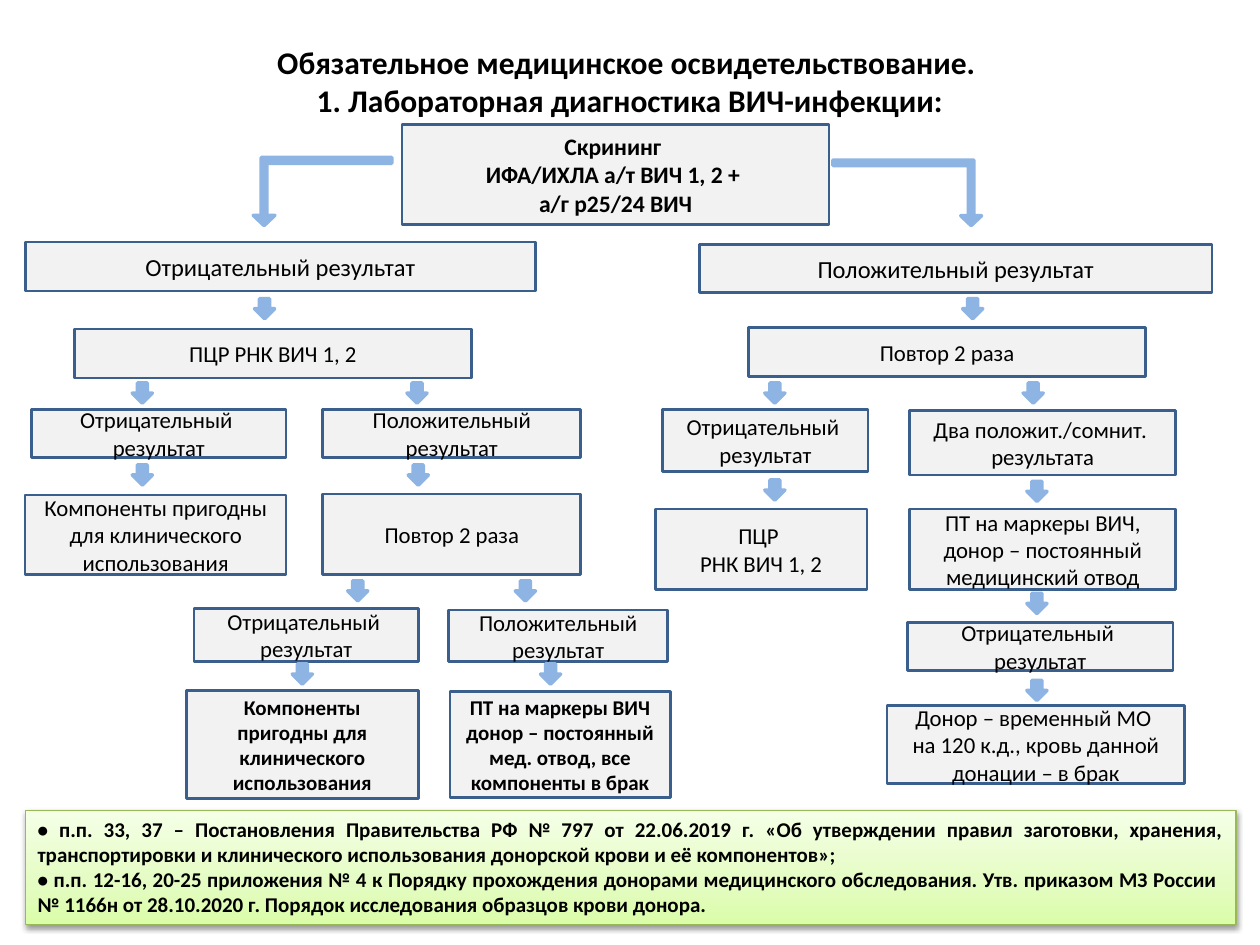
from lxml import etree
from pptx import Presentation, util as u
from pptx.dml.color import RGBColor
from pptx.enum import shapes, text
from pptx.oxml import parse_xml

PX = 9144  # 100 px to the inch
NS = 'xmlns:a="http://schemas.openxmlformats.org/drawingml/2006/main"'
BOX_FILL, BOX_LINE, ARROW, INK = "F2F2F2", "3A5F8C", "8EB4E3", "000000"
hexrgb = RGBColor.from_string


def add_shape(kind, box, fill, line, width):
    sp = s.shapes.add_shape(kind, *(v * PX for v in box))
    sp.shadow.inherit = False
    sp.fill.solid()
    sp.fill.fore_color.rgb = hexrgb(fill)
    sp.line.color.rgb = hexrgb(line)
    sp.line.width = u.Pt(width)
    return sp


def write(tf, lines, size, bold=False, align=text.PP_ALIGN.CENTER,
          anchor=text.MSO_ANCHOR.MIDDLE):
    tf.word_wrap = True
    tf.vertical_anchor = anchor
    font = {"name": "Calibri", "size": u.Pt(size), "bold": bold}
    for i, line in enumerate(lines):
        p = tf.paragraphs[0] if i == 0 else tf.add_paragraph()
        p.text = line
        p.alignment = align
        for r in p.runs:
            r.font.color.rgb = hexrgb(INK)
            for name, value in font.items():
                setattr(r.font, name, value)


prs = Presentation()
prs.slide_width, prs.slide_height = 1000 * PX, 750 * PX
s = prs.slides.add_slide(prs.slide_layouts[5])

title = s.shapes.title
for name, value in zip(("left", "top", "width", "height"), (51, 29, 898, 71)):
    setattr(title, name, value * PX)
write(title.text_frame, ["Обязательное медицинское освидетельствование. ",
                         "1. Лабораторная диагностика ВИЧ-инфекции:"],
      18, True, anchor=text.MSO_ANCHOR.TOP)
title.text_frame.auto_size = text.MSO_AUTO_SIZE.SHAPE_TO_FIT_TEXT

# Flowchart boxes: position, lines, text size, bold
negative = ["Отрицательный ", "результат"]
positive = ["Положительный", "результат"]
usable = ["Компоненты пригодны для клинического использования"]
repeat = ["Повтор 2 раза"]
boxes = [
    ((319, 99, 339, 79), ["Скрининг ", "ИФА/ИХЛА а/т ВИЧ 1, 2 + ", "а/г р25/24 ВИЧ"], 13.5, True),
    # negative branch
    ((20, 192, 405, 39), ["Отрицательный результат"], 14, False),
    ((59, 261, 315, 39), ["ПЦР РНК ВИЧ 1, 2"], 13, False),
    ((25, 325, 202, 38), negative, 13, False),
    ((256, 325, 205, 38), positive, 13, False),
    ((20, 393, 207, 63), usable, 13, False),
    ((256, 392, 205, 64), repeat, 13, False),
    ((154, 483, 178, 42), negative, 13, False),
    ((356, 484, 174, 41), positive, 13, False),
    ((148, 548, 184, 86), usable, 12, True),
    ((357, 549, 175, 84),
     ["ПТ на маркеры ВИЧ донор – постоянный мед. отвод, все компоненты в брак"], 12, True),
    # positive branch
    ((555, 194, 407, 38), ["Положительный результат"], 14, False),
    ((594, 260, 315, 39), repeat, 13, False),
    ((526, 325, 163, 49), negative, 13, False),
    ((722, 326, 211, 51), ["Два положит./сомнит. ", "результата"], 13, False),
    ((520, 404, 168, 64), ["ПЦР ", "РНК ВИЧ 1, 2"], 13, False),
    ((722, 404, 211, 64), ["ПТ на маркеры ВИЧ, донор – постоянный медицинский отвод"], 13, False),
    ((720, 494, 211, 38), negative, 13, False),
    ((704, 560, 236, 62),
     ["Донор – временный МО ", "на 120 к.д., кровь данной донации – в брак"], 13, False),
]
for box, lines, size, bold in boxes:
    sp = add_shape(shapes.MSO_SHAPE.RECTANGLE, box, BOX_FILL, BOX_LINE, 1.5)
    write(sp.text_frame, lines, size, bold)

# Legal references on a green gradient with a soft shadow
note = add_shape(shapes.MSO_SHAPE.RECTANGLE, (20, 643, 961, 91), "E4FCC2", "98B955", 0.75)
write(note.text_frame, [
    "• п.п. 33, 37 – Постановления Правительства РФ № 797 от 22.06.2019 г. "
    "«Об утверждении правил заготовки, хранения, транспортировки и клинического "
    "использования донорской крови и её компонентов»;",
    "• п.п. 12-16, 20-25 приложения № 4 к Порядку прохождения донорами медицинского "
    "обследования. Утв. приказом МЗ России \v"
    "№ 1166н от 28.10.2020 г. Порядок исследования образцов крови донора. ",
], 12, True, text.PP_ALIGN.JUSTIFY, text.MSO_ANCHOR.TOP)
note.text_frame.auto_size = text.MSO_AUTO_SIZE.SHAPE_TO_FIT_TEXT

note.fill.gradient()
note.fill.gradient_angle = 90
stops = note._element.spPr.find(".//{*}gsLst")
for stop in list(stops):
    stops.remove(stop)
for pos, color in ((0, "DAFDA7"), (35, "E4FCC2"), (100, "F5FFE7")):
    stops.append(parse_xml(
        f'<a:gs {NS} pos="{pos * 1000}"><a:srgbClr val="{color}"/></a:gs>'))
note._element.spPr.find("{*}effectLst").append(parse_xml(
    f'<a:outerShdw {NS} blurRad="{u.Pt(3.1)}" dist="{u.Pt(1.6)}" dir="5400000" '
    f'rotWithShape="0"><a:srgbClr val="{INK}"><a:alpha val="38000"/></a:srgbClr></a:outerShdw>'))

# Bent arrows from the screening box to both branches
for box, flipped in (((201, 125, 110, 54), False), ((661, 127, 118, 52), True)):
    sp = add_shape(shapes.MSO_SHAPE.BENT_UP_ARROW, box, ARROW, ARROW, 2)
    sp.rotation = 180
    for i, value in enumerate((0.085, 0.159, 0.151)):
        sp.adjustments[i] = value
    if flipped:
        sp._element.spPr.find("{*}xfrm").set("flipH", "1")

# Small down arrows: top of each row and the left edges in it
arrow_rows = [
    (237, (202, 764)),
    (304, (105, 323, 607, 812)),
    (369, (105, 324)),
    (381, (607,)),
    (382, (815,)),
    (461, (276, 409)),
    (471, (815,)),
    (527, (232, 429)),
    (540, (815,)),
]
for top, lefts in arrow_rows:
    for left in lefts:
        add_shape(shapes.MSO_SHAPE.DOWN_ARROW, (left, top, 16, 16), ARROW, ARROW, 2)

prs.save("out.pptx")
